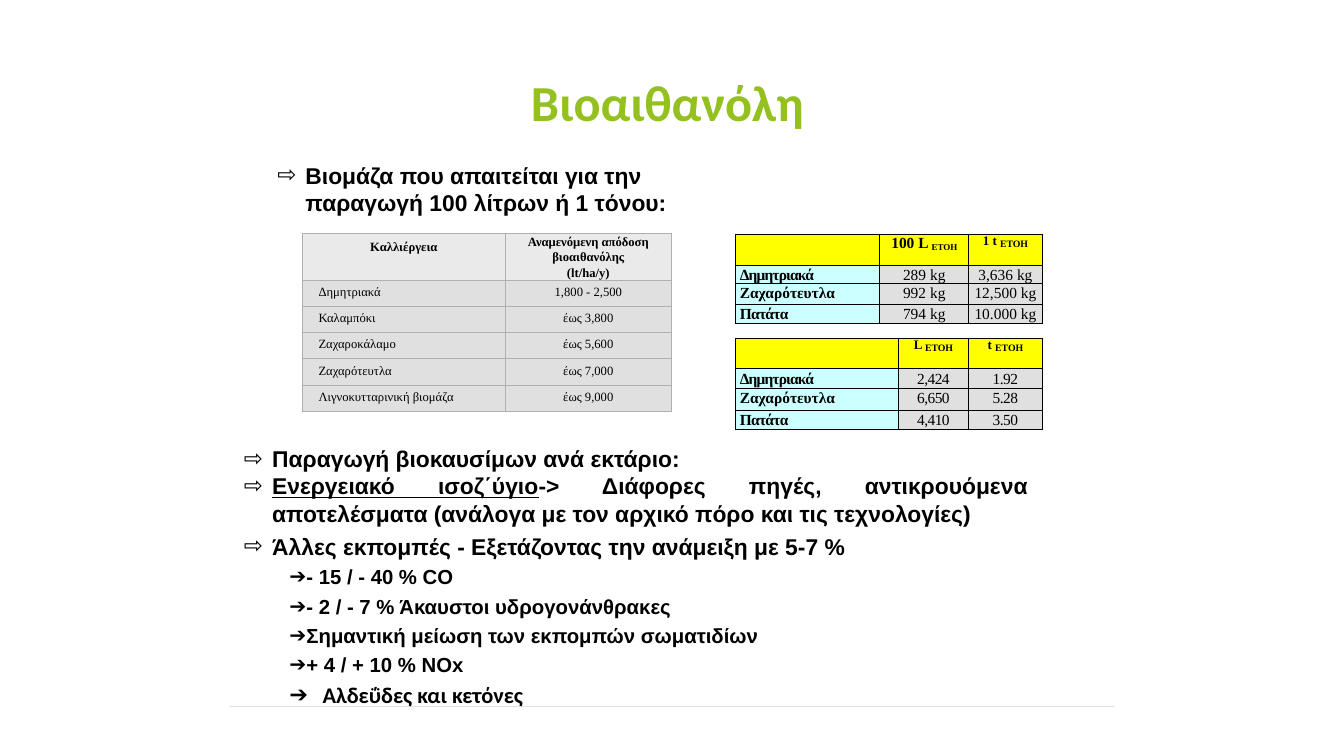
from lxml import etree
from pptx import Presentation
from pptx.dml.color import RGBColor
from pptx.enum.shapes import MSO_CONNECTOR
from pptx.enum.text import MSO_ANCHOR, PP_ALIGN
from pptx.oxml.ns import qn
from pptx.util import Inches, Pt

LEFT, MID, JUST = PP_ALIGN.LEFT, PP_ALIGN.CENTER, PP_ALIGN.JUSTIFY
TOP, CENTER = MSO_ANCHOR.TOP, MSO_ANCHOR.MIDDLE
LINE = MSO_CONNECTOR.STRAIGHT
WIDE, HIGH = Inches(13.33), Inches(7.5)
COLORS = {"ink": "000000", "title": "94C020", "head": "FFFF00", "crop": "CCFFFF",
          "cell": "E0E0E0", "pale": "EAEAEA", "edge": "B0B0B0", "rule": "E0E0E0"}
SERIF = "Times New Roman"


def rgb(name):
    return RGBColor.from_string(COLORS[name])


def place(box):
    """Turn percentages of the slide into lengths."""
    x, y, w, h = box
    return [int(v) for v in (WIDE * x / 100, HIGH * y / 100, WIDE * w / 100, HIGH * h / 100)]


def node(parent, tag, **attrs):
    return etree.SubElement(parent, qn(tag), {k: str(v) for k, v in attrs.items()})


def style(run, size, face, color="ink", bold=True, gap=0, base=0):
    font = run.font
    font.size, font.name, font.bold = Pt(size), face, bold
    font.color.rgb = rgb(color)
    props = run._r.get_or_add_rPr()
    if gap:
        props.set("spc", str(int(gap * 100)))
    if base:
        props.set("baseline", str(base * 1000))


def bullet(para, mark, edge, hang, size):
    props = para._p.get_or_add_pPr()
    props.set("marL", str(Inches(edge)))
    props.set("indent", str(-Inches(hang)))
    node(props, "a:buSzPts", val=int(size * 100))
    node(props, "a:buFont", typeface="Arial")
    node(props, "a:buChar", char=mark)


def frame(slide, box, anchor=TOP):
    text = slide.shapes.add_textbox(*place(box)).text_frame
    text.word_wrap = True
    text.vertical_anchor = anchor
    text.margin_left = text.margin_right = text.margin_bottom = 0
    text.margin_top = Inches(0.01)
    return text


def title(slide, box, words):
    text = frame(slide, box, CENTER)
    text.text = words
    para = text.paragraphs[0]
    para.alignment = MID
    style(para.runs[0], 36, "Calibri", "title")


def points(slide, box, items, align):
    """Items: level, space before, words, and words to underline first."""
    text = frame(slide, box)
    for i, (level, space, words, under) in enumerate(items):
        para = text.add_paragraph() if i else text.paragraphs[0]
        mark, edge, hang, dot, size, face = LEVELS[level]
        bullet(para, mark, edge, hang, dot)
        para.alignment = align
        if space:
            para.space_before = Pt(space)
        for part in filter(None, (under, words)):
            run = para.add_run()
            run.text = part
            style(run, size, face)
            run.font.underline = part == under


def border(cell, color):
    props = cell._tc.get_or_add_tcPr()
    for i, side in enumerate("LRTB"):
        line = etree.Element(qn("a:ln" + side), {"w": str(Pt(0.75))})
        node(node(line, "a:solidFill"), "a:srgbClr", val=COLORS[color])
        props.insert(i, line)


def fill(cell, lines, size, bold, align, color, edge, top=0, left=0, pitch=None):
    """Each line is a string or a list of (words, format) runs."""
    cell.margin_right = cell.margin_bottom = 0
    cell.margin_top, cell.margin_left = Inches(top), Inches(left)
    cell.fill.solid()
    cell.fill.fore_color.rgb = rgb(color)
    border(cell, edge)
    for i, line in enumerate(lines):
        para = cell.text_frame.add_paragraph() if i else cell.text_frame.paragraphs[0]
        para.alignment = align
        if pitch:
            para.line_spacing = Pt(pitch)
        for words, form in [(line, {})] if isinstance(line, str) else line:
            run = para.add_run()
            run.text = words
            style(run, **{"size": size, "face": SERIF, "bold": bold, **form})
        if not line:
            node(para._p, "a:endParaRPr", sz=size * 100)


def grid(slide, box, cols, rows):
    x, y, w, h = place(box)
    table = slide.shapes.add_table(len(rows), len(cols), x, y, w, h).table
    for col, share in zip(table.columns, cols):
        col.width = int(w * share)
    for row, share in zip(table.rows, rows):
        row.height = int(h * share)
    return table


def yields(slide, box, heads, data):
    table = grid(slide, box, (0.55, 0.45), [0.26] + [0.148] * 5)
    for c, lines in enumerate(heads):
        fill(table.cell(0, c), lines, 9, True, MID, "pale", "edge",
             top=0 if c else 0.06, pitch=11 if c else None)
    for r, row in enumerate(data, 1):
        for c, words in enumerate(row):
            fill(table.cell(r, c), [words], 9, False, MID if c else LEFT, "cell", "edge",
                 top=0.05, left=0 if c else 0.16)


def needs(slide, box, cols, heads, data, gap):
    table = grid(slide, box, cols, (0.24, 0.24, 0.28, 0.24))
    for c, runs in enumerate(heads):
        fill(table.cell(0, c), [runs], 11, True, MID, "head", "ink", pitch=12.7)
    for r, (crop, row) in enumerate(zip(CROPS, data), 1):
        fill(table.cell(r, 0), [[crop]], 11, True, LEFT, "crop", "ink", left=0.04, pitch=13.2)
        for c, words in enumerate(row, 1):
            fill(table.cell(r, c), [[(words, {"gap": gap})]], 11, False, MID,
                 "cell", "ink", pitch=13.2)


def rule(slide, box):
    x, y, w, h = place(box)
    line = slide.shapes.add_connector(LINE, x, y, x + w, y + h)
    line.line.color.rgb = rgb("rule")
    line.line.width = Pt(0.75)
    node(line._element.spPr, "a:effectLst")


# Mark, text edge, hang, mark size, text size, font
LEVELS = {"main": ("⇨", 0.3, 0.28, 16.3, 16.3, "Arial"),
          "sub": ("➔", 0.64, 0.17, 11.3, 14.5, "Arial"),
          "last": ("➔", 0.8, 0.33, 11.3, 16, "Calibri")}
CROPS = [("Δημητριακά", {"gap": -0.6}), ("Ζαχαρότευτλα", {}), ("Πατάτα", {"gap": -0.5})]
RAISED, SMALL = {"size": 16, "base": 9}, {"size": 7}
TON = [("1 t ", RAISED), ("ETOH", SMALL)]
NEED = [("289 kg", "3,636 kg"), ("992 kg", "12,500 kg"), ("794 kg", "10.000 kg")]
GAIN = [("2,424", "1.92"), ("6,650", "5.28"), ("4,410", "3.50")]
HEADS = [["Καλλιέργεια"], ["Αναμενόμενη απόδοση βιοαιθανόλης", "(lt/ha/y)"]]
YIELDS = [("Δημητριακά", "1,800 - 2,500"), ("Καλαμπόκι", "έως 3,800"),
          ("Ζαχαροκάλαμο", "έως 5,600"), ("Ζαχαρότευτλα", "έως 7,000"),
          ("Λιγνοκυτταρινική βιομάζα", "έως 9,000")]
INTRO = [("main", 0, "Βιομάζα που απαιτείται για την παραγωγή 100 λίτρων ή 1 τόνου:", "")]
NOTES = [
    ("main", 0, "Παραγωγή βιοκαυσίμων ανά εκτάριο:", ""),
    ("main", 0, "-> Διάφορες πηγές, αντικρουόμενα αποτελέσματα (ανάλογα με τον αρχικό πόρο "
     "και τις τεχνολογίες)", "Ενεργειακό ισοζ΄ύγιο"),
    ("main", 4, "Άλλες εκπομπές - Εξετάζοντας την ανάμειξη με 5-7 %", ""),
    ("sub", 3.5, "- 15 / - 40 % CO", ""),
    ("sub", 3.5, "- 2 / - 7 % Άκαυστοι υδρογονάνθρακες", ""),
    ("sub", 3.5, "Σημαντική μείωση των εκπομπών σωματιδίων", ""),
    ("sub", 3.5, "+ 4 / + 10 % NOx", ""),
    ("last", 3.5, "Αλδεΰδες και κετόνες", "")]


def main():
    deck = Presentation()
    deck.slide_width, deck.slide_height = WIDE, HIGH
    slide = deck.slides.add_slide(deck.slide_layouts[6])
    # Footer rule and text
    rule(slide, (17.1, 93.4, 65.8, 0))
    points(slide, (20.48, 21.2, 33.4, 7.5), INTRO, LEFT)
    points(slide, (18, 58.67, 58.5, 35.2), NOTES, JUST)
    # Biomass needed, ethanol gained and yield per crop
    needs(slide, (54.75, 31.07, 22.8, 10), (0.47, 0.29, 0.24),
          ["", [("100 L ", {}), ("ETOH", {"base": -14})], TON], NEED, 0)
    needs(slide, (54.75, 44.8, 22.8, 10.53), (0.53, 0.23, 0.24),
          ["", [("L ", RAISED), ("ETOH", SMALL)], [("t ", RAISED), ("ETOH", SMALL)]],
          GAIN, -0.4)
    yields(slide, (22.5, 30.93, 27.45, 23.47), HEADS, YIELDS)
    # Heading
    title(slide, (38, 9.2, 23.33, 8.27), "Βιοαιθανόλη")
    deck.save("out.pptx")


if __name__ == "__main__":
    main()
